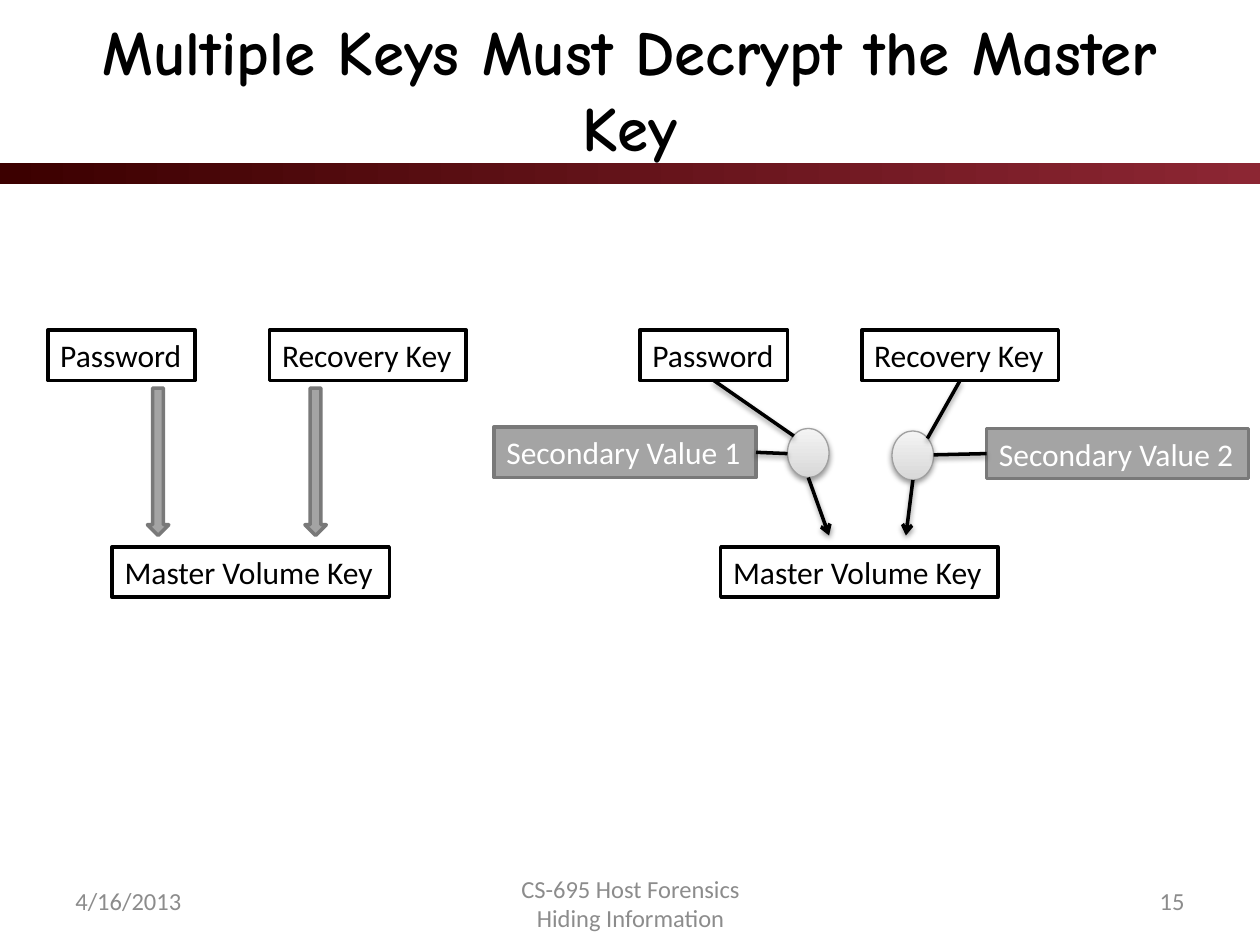
from lxml.etree import SubElement
from pptx import Presentation
from pptx.dml.color import RGBColor
from pptx.enum.shapes import MSO_CONNECTOR, MSO_SHAPE
from pptx.enum.text import MSO_ANCHOR, PP_ALIGN
from pptx.oxml.ns import qn
from pptx.util import Inches, Pt

BLACK = RGBColor(0x00, 0x00, 0x00)
WHITE = RGBColor(0xFF, 0xFF, 0xFF)
GRAY = RGBColor(0xA4, 0xA4, 0xA4)
DARK_GRAY = RGBColor(0x79, 0x79, 0x79)
FOOTER_GRAY = RGBColor(0x8C, 0x8C, 0x8C)
NODE_LINE = RGBColor(0xA0, 0xA0, 0xA0)
NODE_DARK = RGBColor(0xD8, 0xD8, 0xD8)
NODE_LIGHT = RGBColor(0xF4, 0xF4, 0xF4)
MAROON_DARK = RGBColor(0x3C, 0x00, 0x00)
MAROON_LIGHT = RGBColor(0x8C, 0x26, 0x33)

WIDTH, HEIGHT = Inches(10), Inches(7.5)
COLUMNS, ROWS = 100, 75
BOX_ROWS = 4
NODE_COLUMNS, NODE_ROWS = 3.3, 3.9
KEY_ROW, MASTER_ROW, ARROW_END_ROW = 26.2, 43.4, 42.5
RIGHT_SHIFT = 47
BOTTOM, LEFT, RIGHT = 2, 1, 3

TITLE_FONT = {"name": "Comic Neue", "size": Pt(36), "bold": True}
FOOTER_FONT = {"name": "Calibri", "size": Pt(14)}
BOX_FONT = {"name": "Calibri", "size": Pt(18)}


def grid(column, row):
    """Turn a grid position or size into slide lengths."""
    return int(WIDTH * column / COLUMNS), int(HEIGHT * row / ROWS)


def write(frame, text, font, color, align=PP_ALIGN.LEFT, **frame_format):
    """Fill a text frame with one formatted paragraph."""
    frame.text = text
    for name, value in frame_format.items():
        setattr(frame, name, value)
    paragraph = frame.paragraphs[0]
    paragraph.alignment = align
    for name, value in font.items():
        setattr(paragraph.font, name, value)
    paragraph.font.color.rgb = color


def add_text(slide, place, text, font, color, align):
    """Add a wrapped, vertically centred text box."""
    box = slide.shapes.add_textbox(*grid(*place[:2]), *grid(*place[2:]))
    write(box.text_frame, text, font, color, align,
          word_wrap=True, vertical_anchor=MSO_ANCHOR.MIDDLE)


def add_shape(slide, kind, place, fill, line, line_width=2):
    """Add a preset shape with a solid or two-colour gradient fill."""
    shape = slide.shapes.add_shape(kind, *grid(*place[:2]), *grid(*place[2:]))
    shape.shadow.inherit = False
    if isinstance(fill, RGBColor):
        shape.fill.solid()
        shape.fill.fore_color.rgb = fill
    else:
        start, end, angle = fill
        shape.fill.gradient()
        shape.fill.gradient_angle = angle
        for stop, color in zip(shape.fill.gradient_stops, (start, end)):
            stop.color.rgb = color
    if line is None:
        shape.line.fill.background()
    else:
        shape.line.color.rgb = line
        shape.line.width = Pt(line_width)
    return shape


def add_box(slide, column, row, columns, text, colors=(WHITE, BLACK, BLACK)):
    """Add a labelled rectangle; colors are fill, line and text."""
    fill, line, text_color = colors
    box = add_shape(slide, MSO_SHAPE.RECTANGLE,
                    (column, row, columns, BOX_ROWS), fill, line)
    write(box.text_frame, text, BOX_FONT, text_color,
          word_wrap=False, vertical_anchor=MSO_ANCHOR.TOP)
    return box


def cast_shadow(shape):
    """Give a shape or connector a soft shadow just below it."""
    properties = shape.element.spPr
    effects = properties.find(qn("a:effectLst"))
    if effects is None:
        effects = SubElement(properties, qn("a:effectLst"))
    shadow = SubElement(effects, qn("a:outerShdw"), blurRad=str(Pt(3.1)),
                        dist=str(Pt(1.6)), dir="5400000", rotWithShape="0")
    color = SubElement(shadow, qn("a:srgbClr"), val=str(BLACK))
    SubElement(color, qn("a:alpha"), val="38000")


def add_node(slide, column, row):
    """Add a shaded circle where two keys are combined."""
    node = add_shape(slide, MSO_SHAPE.OVAL,
                     (column, row, NODE_COLUMNS, NODE_ROWS),
                     (NODE_DARK, NODE_LIGHT, 90), NODE_LINE, 0.75)
    cast_shadow(node)


def add_line(slide, start, end, box=None, side=None, arrow=False):
    """Add a shadowed line, joined to a box side or ending in an arrow."""
    line = slide.shapes.add_connector(MSO_CONNECTOR.STRAIGHT,
                                      *grid(*start), *grid(*end))
    if box is not None:
        line.begin_connect(box, side)
    line.line.color.rgb = BLACK
    line.line.width = Pt(2)
    if arrow:
        SubElement(line.line._get_or_add_ln(), qn("a:tailEnd"), type="arrow")
    cast_shadow(line)


def add_key_boxes(slide, shift, master_column):
    """Add the password, recovery key and master key boxes of one diagram."""
    password = add_box(slide, 3.8 + shift, KEY_ROW, 11.7, "Password")
    recovery = add_box(slide, 21.4 + shift, KEY_ROW, 15.6, "Recovery Key")
    add_box(slide, master_column, MASTER_ROW, 22, "Master Volume Key")
    return password, recovery


def add_direct_diagram(slide):
    """Add the diagram in which each key decrypts the master key."""
    add_key_boxes(slide, 0, 8.9)
    for column in (11.7, 24.2):
        add_shape(slide, MSO_SHAPE.DOWN_ARROW,
                  (column, 30.8, 1.7, ARROW_END_ROW - 30.8), GRAY, DARK_GRAY)


def add_combined_diagram(slide):
    """Add the diagram in which each key needs a secondary value."""
    keys = add_key_boxes(slide, RIGHT_SHIFT, 57.2)
    branches = (
        (keys[0], 1, 39.2, 33.9, RIGHT, (62.5, 34), (63, 34.6), (62.5, 36), 65.8),
        (keys[1], 2, 78.3, 34, LEFT, (70.8, 34.2), (73.6, 34.8), (74.1, 36.1), 71.9),
    )
    for key, number, column, row, side, node, key_end, value_end, tip in branches:
        value = add_box(slide, column, row, 20.8, f"Secondary Value {number}",
                        (GRAY, DARK_GRAY, WHITE))
        add_node(slide, *node)
        add_line(slide, key_end, key_end, key, BOTTOM)
        add_line(slide, value_end, value_end, value, side)
        bottom = (node[0] + NODE_COLUMNS / 2, node[1] + NODE_ROWS)
        add_line(slide, bottom, (tip, ARROW_END_ROW), arrow=True)


def main():
    """Build and save the slide."""
    presentation = Presentation()
    presentation.slide_width, presentation.slide_height = WIDTH, HEIGHT
    slide = presentation.slides.add_slide(presentation.slide_layouts[6])
    add_shape(slide, MSO_SHAPE.RECTANGLE, (0, 12.95, COLUMNS, 1.7),
              (MAROON_DARK, MAROON_LIGHT, 0), None)
    add_text(slide, (5, 1.5, 90, 11), "Multiple Keys Must Decrypt the Master Key",
             TITLE_FONT, BLACK, PP_ALIGN.CENTER)
    add_direct_diagram(slide)
    add_combined_diagram(slide)
    footers = (
        ((5, 69.5, 18.3, 4), "4/16/2013", PP_ALIGN.LEFT),
        ((37.6, 69.7, 24.9, 4), "CS-695 Host Forensics\vHiding Information",
         PP_ALIGN.CENTER),
        ((76.7, 69.5, 18.3, 4), "15", PP_ALIGN.RIGHT),
    )
    for place, text, align in footers:
        add_text(slide, place, text, FOOTER_FONT, FOOTER_GRAY, align)
    presentation.save("out.pptx")


if __name__ == "__main__":
    main()
